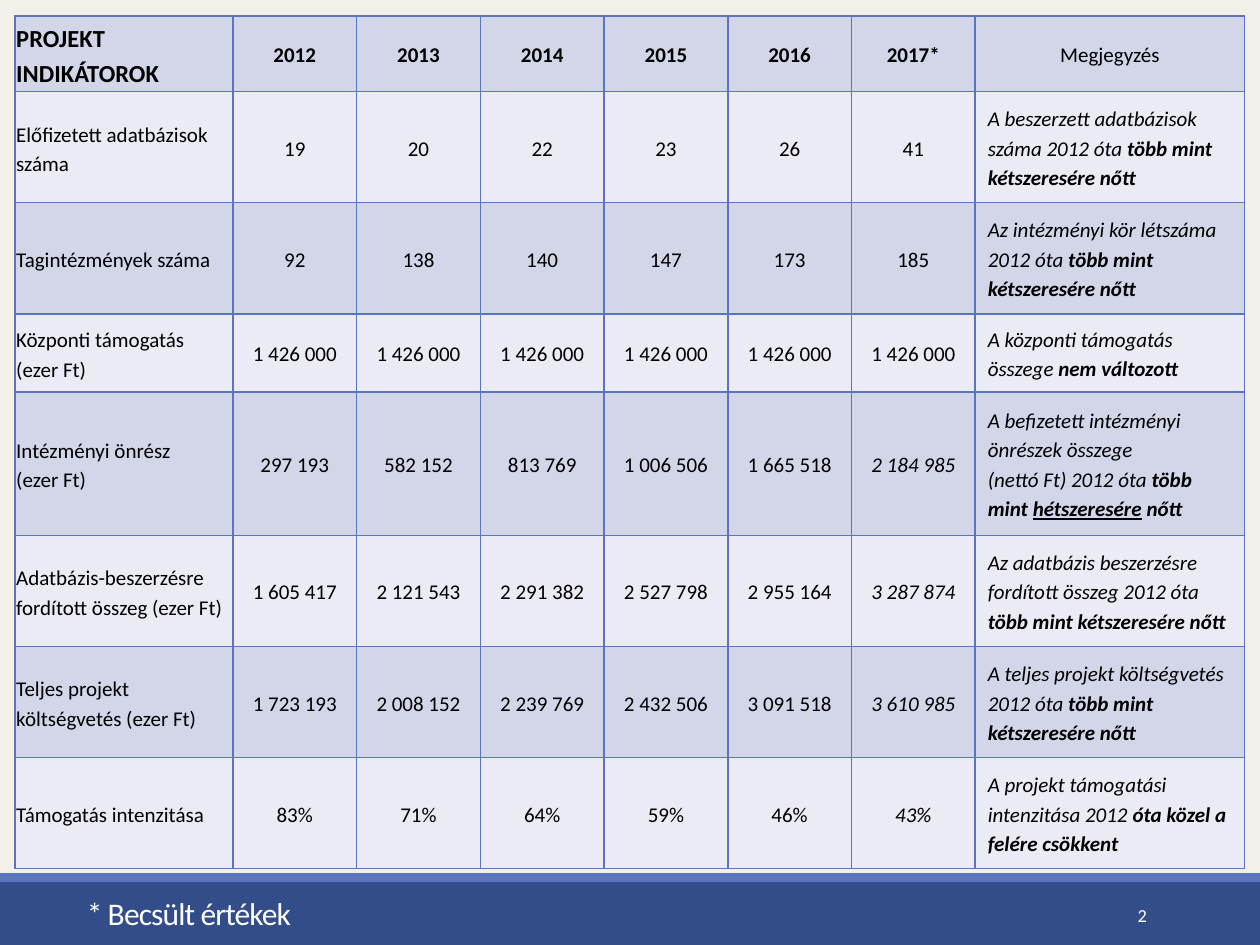
"""Builds the slide with the table of project indicators."""
from lxml import etree
from pptx import Presentation
from pptx.dml.color import RGBColor
from pptx.enum.shapes import MSO_SHAPE
from pptx.enum.text import MSO_ANCHOR, MSO_AUTO_SIZE, PP_ALIGN
from pptx.oxml.ns import qn
from pptx.util import Pt

RECT = MSO_SHAPE.RECTANGLE
MIDDLE, BOTTOM = MSO_ANCHOR.MIDDLE, MSO_ANCHOR.BOTTOM
LEFT, CENTER, RIGHT = PP_ALIGN.LEFT, PP_ALIGN.CENTER, PP_ALIGN.RIGHT
NO_FIT = MSO_AUTO_SIZE.NONE

FONT = "Calibri"
COLORS = {
    "background": "F3F0E9",
    "footer": "324D8A",
    "accent": "5A74BE",
    "dark_band": "D2D6E8",
    "light_band": "EAEBF4",
    "text": "000000",
    "white": "FFFFFF",
}
COL_WIDTHS = [124.5] + [70.7] * 6 + [154]
ROW_HEIGHTS = [43.2, 63.5, 63.5, 44.6, 82, 63.5, 63.5, 63.5]
LABEL_MARGINS = (0.7, 0.7, 0.7, 0)
VALUE_MARGINS = (10.8,) * 4
NOTE_MARGINS = (7.2, 3.6, 7.2, 3.6)
FIRST_ESTIMATED_ROW = 4

YEARS = ["2012", "2013", "2014", "2015", "2016", "2017*"]
DOUBLED = ("több mint kétszeresére nőtt", "b")
ROWS = [
    (["Előfizetett adatbázisok száma"],
     ["19", "20", "22", "23", "26", "41"],
     [("A beszerzett adatbázisok száma 2012 óta ", ""), DOUBLED]),
    (["Tagintézmények száma"],
     ["92", "138", "140", "147", "173", "185"],
     [("Az intézményi kör létszáma 2012 óta ", ""), DOUBLED]),
    (["Központi támogatás\n(ezer Ft)"],
     ["1 426 000"] * 6,
     [("A központi támogatás összege ", ""), ("nem változott", "b")]),
    (["Intézményi önrész", "(ezer Ft)"],
     ["297 193", "582 152", "813 769", "1 006 506", "1 665 518", "2 184 985"],
     [("A befizetett intézményi önrészek összege\n(nettó Ft) 2012 óta ", ""),
      ("több mint ", "b"), ("hétszeresére", "bu"), (" nőtt", "b")]),
    (["Adatbázis-beszerzésre fordított összeg (ezer Ft)"],
     ["1 605 417", "2 121 543", "2 291 382", "2 527 798", "2 955 164", "3 287 874"],
     [("Az adatbázis beszerzésre fordított összeg 2012 óta ", ""), DOUBLED]),
    (["Teljes projekt költségvetés (ezer Ft)"],
     ["1 723 193", "2 008 152", "2 239 769", "2 432 506", "3 091 518", "3 610 985"],
     [("A teljes projekt költségvetés 2012 óta ", ""), DOUBLED]),
    (["Támogatás intenzitása"],
     ["83%", "71%", "64%", "59%", "46%", "43%"],
     [("A projekt támogatási intenzitása 2012 ", ""),
      ("óta közel a felére csökkent", "b")]),
]


def rgb(name):
    return RGBColor.from_string(COLORS[name])


def format_paragraph(p, size, color="text", align=LEFT, spacing=1.15, bold=False, italic=False):
    p.alignment = align
    p.line_spacing = spacing
    p.font.name = FONT
    p.font.size = Pt(size)
    p.font.color.rgb = rgb(color)
    p.font.bold = bold
    p.font.italic = italic


def add_runs(p, runs):
    for text, style in runs:
        for i, line in enumerate(text.split("\n")):
            if i:
                p.add_line_break()
            r = p.add_run()
            r.text = line
            if "b" in style:
                r.font.bold = True
            if "u" in style:
                r.font.underline = True


def add_borders(cell):
    tc_pr = cell._tc.get_or_add_tcPr()
    for side in ("lnL", "lnR", "lnT", "lnB"):
        ln = etree.SubElement(tc_pr, qn(f"a:{side}"), w=str(Pt(1)))
        fill = etree.SubElement(ln, qn("a:solidFill"))
        etree.SubElement(fill, qn("a:srgbClr"), val=COLORS["accent"])


def fill_cell(cell, paragraphs, margins, band, size=12, **style):
    add_borders(cell)
    cell.fill.solid()
    cell.fill.fore_color.rgb = rgb(band)
    cell.vertical_anchor = MIDDLE
    cell.margin_left, cell.margin_top, cell.margin_right, cell.margin_bottom = map(Pt, margins)
    tf = cell.text_frame
    for i, runs in enumerate(paragraphs):
        p = tf.add_paragraph() if i else tf.paragraphs[0]
        format_paragraph(p, size, **style)
        add_runs(p, runs)


def add_indicator_table(s):
    frame = s.shapes.add_table(len(ROW_HEIGHTS), len(COL_WIDTHS), Pt(8.6), Pt(9.1),
                               Pt(sum(COL_WIDTHS)), Pt(sum(ROW_HEIGHTS)))
    table = frame.table
    table.first_row = table.horz_banding = False
    for column, width in zip(table.columns, COL_WIDTHS):
        column.width = Pt(width)
    for row, height in zip(table.rows, ROW_HEIGHTS):
        row.height = Pt(height)

    last = len(COL_WIDTHS) - 1
    band = "dark_band"
    fill_cell(table.cell(0, 0), [[("PROJEKT INDIKÁTOROK", "")]], LABEL_MARGINS, band,
              size=14, bold=True)
    for c, year in enumerate(YEARS, 1):
        fill_cell(table.cell(0, c), [[(year, "")]], VALUE_MARGINS, band, align=CENTER, bold=True)
    fill_cell(table.cell(0, last), [[("Megjegyzés", "")]], NOTE_MARGINS, band, align=CENTER)

    for r, (label, values, note) in enumerate(ROWS, 1):
        band = "light_band" if r % 2 else "dark_band"
        fill_cell(table.cell(r, 0), [[(line, "")] for line in label], LABEL_MARGINS, band)
        for c, value in enumerate(values, 1):
            estimated = c == len(values) and r >= FIRST_ESTIMATED_ROW
            fill_cell(table.cell(r, c), [[(value, "")]], VALUE_MARGINS, band,
                      align=CENTER, italic=estimated)
        fill_cell(table.cell(r, last), [note], NOTE_MARGINS, band, italic=True)


def add_bar(s, top, height, color):
    sp = s.shapes.add_shape(RECT, Pt(0), Pt(top), Pt(720), Pt(height))
    sp.shadow.inherit = False
    sp.fill.solid()
    sp.fill.fore_color.rgb = rgb(color)
    sp.line.fill.background()


def format_title(s):
    sp = s.shapes.title
    sp.left, sp.top, sp.width, sp.height = Pt(8.6), Pt(508.3), Pt(198.7), Pt(28.1)
    tf = sp.text_frame
    tf.word_wrap = True
    tf.auto_size = NO_FIT
    tf.vertical_anchor = BOTTOM
    p = tf.paragraphs[0]
    format_paragraph(p, 18, "white", CENTER, 0.85)
    add_runs(p, [("* Becsült értékek", "")])
    p.runs[0]._r.get_or_add_rPr().set("spc", "-50")


def add_slide_number(s):
    sp = s.shapes.add_textbox(Pt(584.6), Pt(508.3), Pt(77.8), Pt(28.8))
    tf = sp.text_frame
    tf.word_wrap = True
    tf.vertical_anchor = MIDDLE
    p = tf.paragraphs[0]
    format_paragraph(p, 10.5, "white", RIGHT, 1.0)
    add_runs(p, [("2", "")])


def main():
    prs = Presentation()
    prs.slide_width, prs.slide_height = Pt(720), Pt(540)
    s = prs.slides.add_slide(prs.slide_layouts[5])
    s.background.fill.solid()
    s.background.fill.fore_color.rgb = rgb("background")
    add_bar(s, 504, 36, "footer")
    add_bar(s, 499, 5, "accent")
    add_indicator_table(s)
    format_title(s)
    s.shapes._spTree.append(s.shapes.title._element)
    add_slide_number(s)
    prs.save("out.pptx")


if __name__ == "__main__":
    main()
